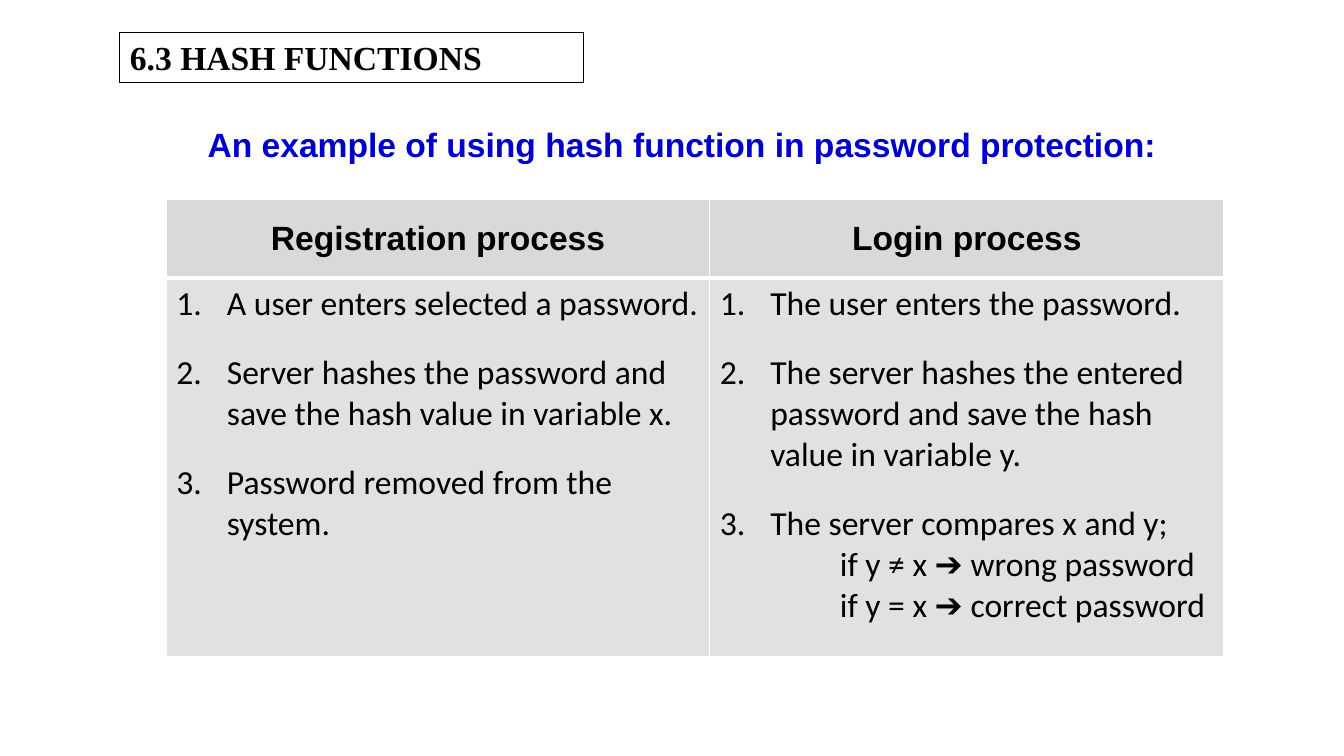
from lxml.etree import SubElement
from pptx import Presentation
from pptx.dml.color import RGBColor
from pptx.enum.shapes import MSO_SHAPE
from pptx.enum.text import MSO_ANCHOR, PP_ALIGN
from pptx.oxml import parse_xml
from pptx.oxml.ns import nsdecls, qn
from pptx.util import Inches, Pt

HEADS = ["Registration process", "Login process"]
STEPS = [
    ["A user enters selected a password.",
     "Server hashes the password and save the hash value in variable x.",
     "Password removed from the system."],
    ["The user enters the password.",
     "The server hashes the entered password and save the hash value in variable y.",
     "The server compares x and y;"],
]
RESULT = "if y ≠ x ➔ wrong password\nif y = x ➔ correct password"


def color(code):
    return RGBColor.from_string(code)


def write(para, text, font="Calibri", bold=False, tint="000000",
          align=PP_ALIGN.LEFT, after=0):
    para.text = text
    para.alignment = align
    para.space_after = Pt(after)
    for run in para.runs:
        run.font.name = font
        run.font.size = Pt(24)
        run.font.bold = bold
        run.font.color.rgb = color(tint)


def indent(para, left, first=0):
    props = para._p.get_or_add_pPr()
    props.set("marL", str(Inches(left)))
    props.set("indent", str(Inches(first)))


def number(para):
    indent(para, 0.5, -0.5)
    SubElement(para._p.pPr, qn("a:buAutoNum"), type="arabicPeriod")


def border(cell, widths):
    """Draw white borders; widths in points go left, right, top, bottom."""
    props = cell._tc.get_or_add_tcPr()
    for place, (side, width) in enumerate(zip("LRTB", widths)):
        props.insert(place, parse_xml(
            f'<a:ln{side} {nsdecls("a")} w="{Pt(width)}"><a:solidFill>'
            f'<a:srgbClr val="FFFFFF"/></a:solidFill></a:ln{side}>'))


def paint(cell, tint, widths):
    cell.fill.solid()
    cell.fill.fore_color.rgb = color(tint)
    border(cell, widths)


def add_intro(slide):
    box = slide.shapes.add_textbox(
        Inches(1.96), Inches(1.14), Inches(10.18), Inches(5.61))
    frame = box.text_frame
    frame.word_wrap = True
    frame.margin_top = Inches(0.09)
    write(frame.paragraphs[0],
          "An example of using hash function in password protection:",
          font="Arial", bold=True, tint="0000CC", align=PP_ALIGN.JUSTIFY)


def add_title(slide):
    box = slide.shapes.add_shape(
        MSO_SHAPE.RECTANGLE, Inches(1.19), Inches(0.32), Inches(4.6), Inches(0.5))
    box.shadow.inherit = False
    box.fill.background()
    box.line.color.rgb = color("000000")
    box.line.width = Pt(0.75)
    frame = box.text_frame
    frame.word_wrap = True
    frame.vertical_anchor = MSO_ANCHOR.TOP
    write(frame.paragraphs[0], "6.3 HASH FUNCTIONS",
          font="Times New Roman", bold=True)


def fill_steps(frame, steps, result=None):
    for i, step in enumerate(steps):
        para = frame.add_paragraph() if i else frame.paragraphs[0]
        last = result and i == len(steps) - 1
        write(para, step, after=0 if last else 20)
        number(para)
    if result:
        para = frame.add_paragraph()
        write(para, result)
        indent(para, 1.19)


def add_table(slide):
    table = slide.shapes.add_table(
        2, 2, Inches(1.65), Inches(1.98), Inches(10.49), Inches(4.53)).table
    for row, height in zip(table.rows, (0.78, 3.75)):
        row.height = Inches(height)
    for col, width in zip(table.columns, (5.39, 5.1)):
        col.width = Inches(width)
    for i, (head, steps, result) in enumerate(zip(HEADS, STEPS, (None, RESULT))):
        top, body = table.cell(0, i), table.cell(1, i)
        paint(top, "D9D9D9", (1, 1, 1, 3))
        top.vertical_anchor = MSO_ANCHOR.MIDDLE
        write(top.text_frame.paragraphs[0], head,
              font="Arial", bold=True, align=PP_ALIGN.CENTER)
        paint(body, "E1E1E1", (1, 1, 3, 1))
        fill_steps(body.text_frame, steps, result)


def main():
    deck = Presentation()
    deck.slide_width, deck.slide_height = Inches(13.33), Inches(7.5)
    slide = deck.slides.add_slide(deck.slide_layouts[6])
    add_intro(slide)
    add_title(slide)
    add_table(slide)
    deck.save("out.pptx")


if __name__ == "__main__":
    main()
